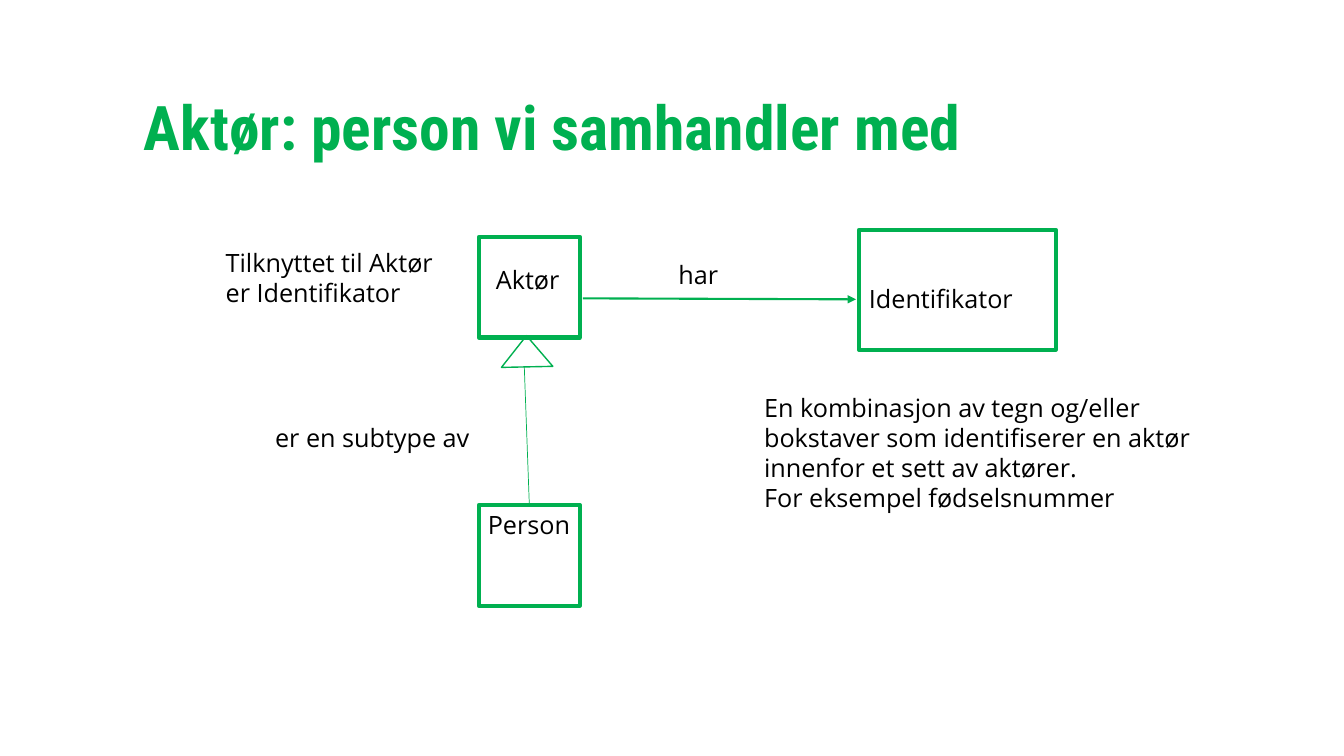
from pptx import Presentation
from pptx.dml.color import RGBColor
from pptx.enum.shapes import MSO_CONNECTOR, MSO_SHAPE
from pptx.enum.text import MSO_ANCHOR
from pptx.oxml.ns import qn
from pptx.util import Inches, Pt
from lxml import etree

GREEN = RGBColor(0x00, 0xB0, 0x50)
BLACK = RGBColor(0x00, 0x00, 0x00)
RECTANGLE, TRIANGLE = MSO_SHAPE.RECTANGLE, MSO_SHAPE.ISOSCELES_TRIANGLE
STRAIGHT = MSO_CONNECTOR.STRAIGHT
MIDDLE = MSO_ANCHOR.MIDDLE


def add_outline(kind, left, top, width, height, weight):
    """Add an unfilled shape with a green outline."""
    outline = slide.shapes.add_shape(
        kind, Inches(left), Inches(top), Inches(width), Inches(height))
    outline.shadow.inherit = False
    outline.fill.background()
    outline.line.color.rgb = GREEN
    outline.line.width = Pt(weight)
    return outline


def add_relation(start_x, start_y, end_x, end_y, weight):
    """Add a straight green line without a shadow."""
    relation = slide.shapes.add_connector(
        STRAIGHT, Inches(start_x), Inches(start_y), Inches(end_x), Inches(end_y))
    relation.line.color.rgb = GREEN
    relation.line.width = Pt(weight)
    etree.SubElement(relation._element.spPr, qn("a:effectLst"))
    return relation


prs = Presentation()
prs.slide_width = Inches(13.33)
prs.slide_height = Inches(7.5)
slide = prs.slides.add_slide(prs.slide_layouts[6])

# Title
title = slide.shapes.add_textbox(Inches(1.33), Inches(0.6), Inches(10.56), Inches(1.43))
title_frame = title.text_frame
title_frame.word_wrap = True
title_frame.vertical_anchor = MIDDLE
title_frame.margin_top = 0
title_frame.text = "Aktør: person vi samhandler med"
heading = title_frame.paragraphs[0]
heading.line_spacing = 0.9
heading_font = heading.runs[0].font
heading_font.name = "Roboto Condensed"
heading_font.size = Pt(44)
heading_font.bold = True
heading_font.color.rgb = GREEN

# Concepts
person = add_outline(RECTANGLE, 4.75, 5.01, 1, 1, 3)
add_outline(RECTANGLE, 4.75, 2.35, 1, 1, 3)
add_outline(RECTANGLE, 8.52, 2.28, 1.95, 1.19, 3)

# Subtype relation, from Person up to Aktør
subtype = add_relation(5.25, 5.01, 5.2, 3.64, 0.5)
subtype.begin_connect(person, 0)
subtype_head = add_outline(TRIANGLE, 4.97, 3.33, 0.51, 0.31, 1)
subtype_head.rotation = 358.8

# Relation from Aktør to Identifikator
has_relation = add_relation(5.78, 2.96, 8.49, 2.97, 1.5)
etree.SubElement(has_relation.line._get_or_add_ln(), qn("a:tailEnd"), type="triangle")

# Labels: left, top, width, height, wraps, text
labels = [
    (4.74, 5.0, 1.03, 0.4, False, "Person"),
    (2.63, 4.14, 2.17, 0.4, True, "er en subtype av"),
    (4.82, 2.57, 0.84, 0.4, False, "Aktør"),
    (2.14, 2.4, 2.45, 0.71, True, "Tilknyttet til Aktør er Identifikator"),
    (6.63, 2.52, 0.6, 0.4, False, "har"),
    (8.52, 2.76, 1.95, 0.48, True, "Identifikator"),
    (7.48, 3.84, 4.85, 1.57, True,
     "En kombinasjon av tegn og/eller bokstaver som identifiserer en aktør "
     "innenfor et sett av aktører.\nFor eksempel fødselsnummer"),
]
for left, top, width, height, wraps, wording in labels:
    label = slide.shapes.add_textbox(
        Inches(left), Inches(top), Inches(width), Inches(height))
    label.text_frame.word_wrap = wraps
    label.text_frame.text = wording
    for paragraph in label.text_frame.paragraphs:
        font = paragraph.runs[0].font
        font.name = "Open Sans"
        font.size = Pt(18)
        font.color.rgb = BLACK

prs.save("out.pptx")
